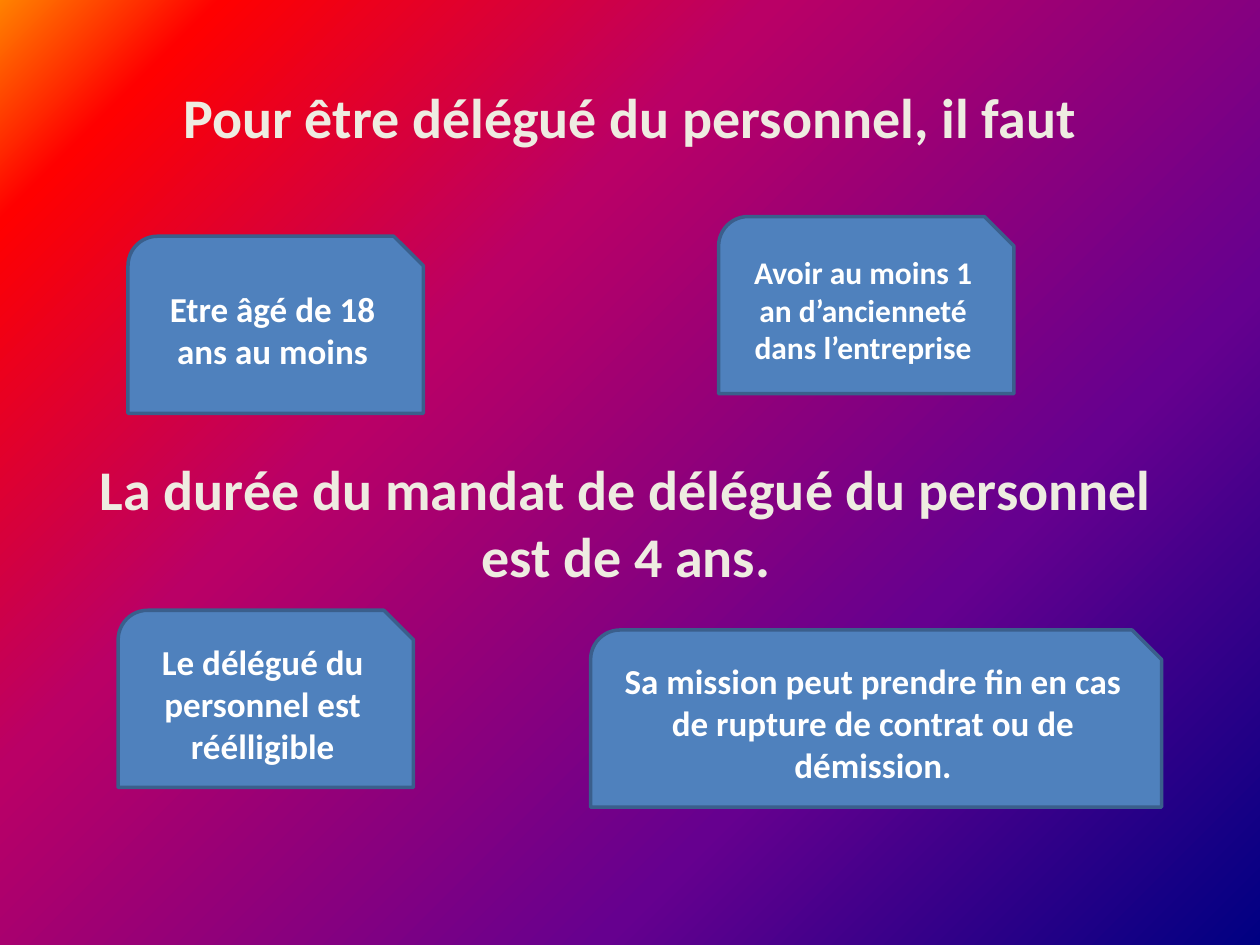
from dataclasses import dataclass

from lxml.etree import SubElement
from pptx import Presentation
from pptx.dml.color import RGBColor
from pptx.enum.shapes import MSO_SHAPE
from pptx.enum.text import MSO_ANCHOR, PP_ALIGN
from pptx.oxml.ns import qn
from pptx.shapes.autoshape import Shape
from pptx.slide import Slide
from pptx.util import Emu, Inches, Pt

SLIDE_WIDTH = Inches(10)
SLIDE_HEIGHT = Inches(7.5)
COLUMNS = 64
ROWS = 48
FONT = "Calibri"

CREAM = RGBColor(0xEE, 0xEC, 0xE1)
WHITE = RGBColor(0xFF, 0xFF, 0xFF)
CARD_BLUE = RGBColor(0x4F, 0x81, 0xBD)
CARD_BORDER = RGBColor(0x3A, 0x5F, 0x8C)
BACKGROUND_STOPS = (
    (0, RGBColor(0x00, 0x00, 0x82)),
    (30, RGBColor(0x66, 0x00, 0x8F)),
    (65, RGBColor(0xBA, 0x00, 0x66)),
    (90, RGBColor(0xFF, 0x00, 0x00)),
    (100, RGBColor(0xFF, 0x82, 0x00)),
)


@dataclass(frozen=True)
class Block:
    text: str
    column: float
    row: float
    columns: float
    rows: float
    size: int

    def frame(self) -> tuple[Emu, Emu, Emu, Emu]:
        return (
            Emu(int(SLIDE_WIDTH * self.column / COLUMNS)),
            Emu(int(SLIDE_HEIGHT * self.row / ROWS)),
            Emu(int(SLIDE_WIDTH * self.columns / COLUMNS)),
            Emu(int(SLIDE_HEIGHT * self.rows / ROWS)),
        )


HEADINGS = (
    Block("Pour être délégué du personnel, il faut", 3.2, 1.92, 57.6, 8, 32),
    Block("La durée du mandat de délégué du personnel est de 4 ans.",
          3, 22.5, 57.6, 8, 32),
)
CARDS = (
    Block("Etre âgé de 18 ans au moins", 6.5, 12, 15, 9, 20),
    Block("Avoir au moins 1 an d’ancienneté dans l’entreprise",
          36.5, 11, 15, 9, 18),
    Block("Le délégué du personnel est réélligible", 6, 31, 15, 9, 20),
    Block("Sa mission peut prendre fin en cas de rupture de contrat ou de démission.",
          30, 32, 29, 9, 20),
)


def paint_background(slide: Slide) -> None:
    slide.background.fill.gradient()
    gradient = next(slide.element.iter(qn("a:gradFill")))
    for child in list(gradient):
        gradient.remove(child)
    stops = SubElement(gradient, qn("a:gsLst"))
    for percent, color in BACKGROUND_STOPS:
        stop = SubElement(stops, qn("a:gs"), pos=str(percent * 1000))
        SubElement(stop, qn("a:srgbClr"), val=str(color))
    circle = SubElement(gradient, qn("a:path"), path="circle")
    SubElement(circle, qn("a:fillToRect"), l="100000", t="100000")


def write_text(shape: Shape, block: Block, color: RGBColor) -> None:
    text_frame = shape.text_frame
    text_frame.word_wrap = True
    text_frame.vertical_anchor = MSO_ANCHOR.MIDDLE
    paragraph = text_frame.paragraphs[0]
    paragraph.alignment = PP_ALIGN.CENTER
    run = paragraph.add_run()
    run.text = block.text
    run.font.name = FONT
    run.font.size = Pt(block.size)
    run.font.bold = True
    run.font.color.rgb = color


def draw_heading(slide: Slide, block: Block) -> None:
    write_text(slide.shapes.add_textbox(*block.frame()), block, CREAM)


def draw_card(slide: Slide, block: Block) -> None:
    shape = slide.shapes.add_shape(MSO_SHAPE.SNIP_ROUND_RECTANGLE, *block.frame())
    shape.shadow.inherit = False
    shape.fill.solid()
    shape.fill.fore_color.rgb = CARD_BLUE
    shape.line.color.rgb = CARD_BORDER
    shape.line.width = Pt(2)
    write_text(shape, block, WHITE)


def main() -> None:
    presentation = Presentation()
    presentation.slide_width = SLIDE_WIDTH
    presentation.slide_height = SLIDE_HEIGHT
    slide = presentation.slides.add_slide(presentation.slide_layouts[6])
    paint_background(slide)
    for heading in HEADINGS:
        draw_heading(slide, heading)
    for card in CARDS:
        draw_card(slide, card)
    presentation.save("out.pptx")


if __name__ == "__main__":
    main()
